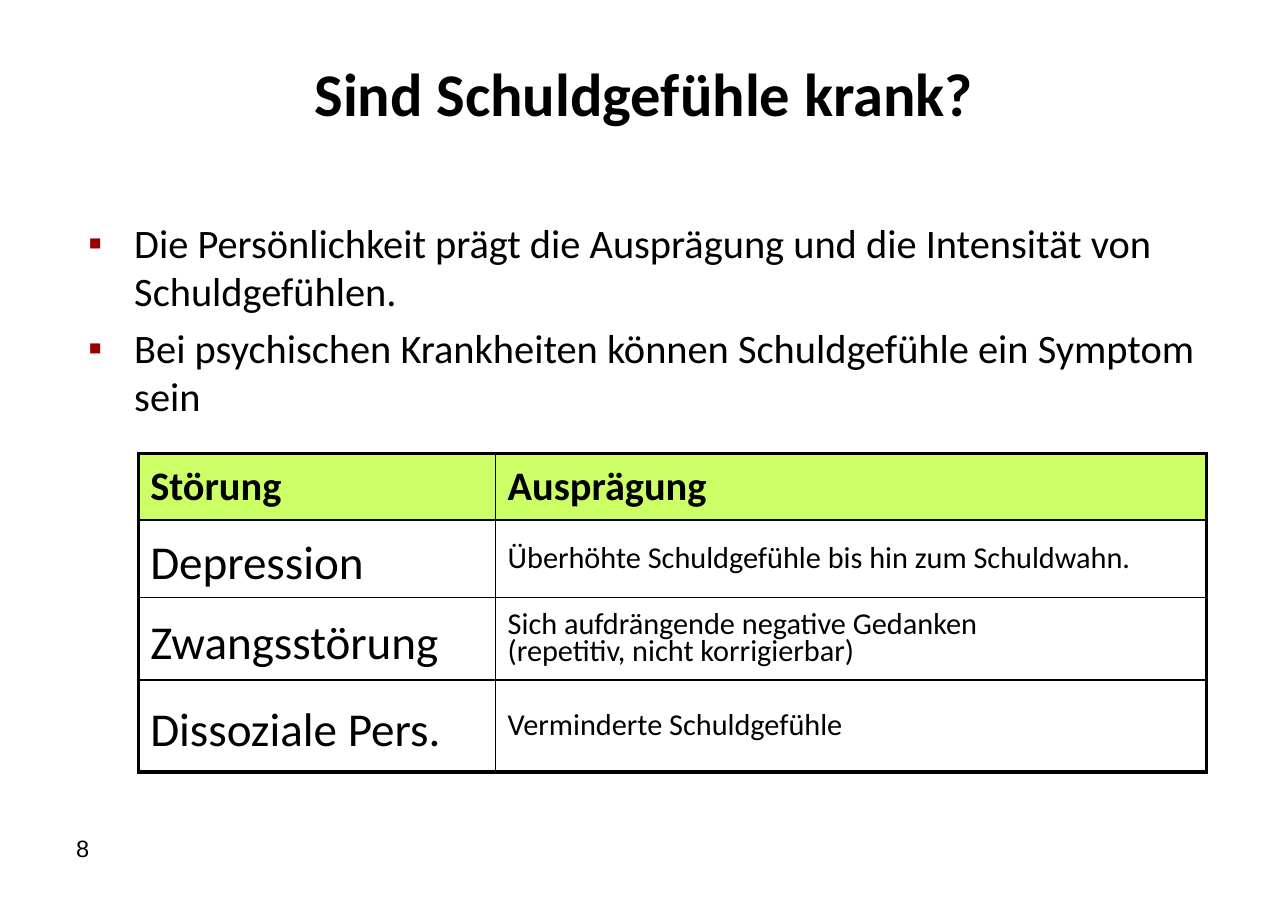
from lxml.etree import SubElement
from pptx import Presentation
from pptx.dml.color import RGBColor
from pptx.enum.text import MSO_ANCHOR, PP_ALIGN
from pptx.oxml.ns import qn
from pptx.util import Inches, Pt

BLACK = RGBColor(0x00, 0x00, 0x00)
RED = RGBColor(0x99, 0x00, 0x00)
LIME = RGBColor(0xCC, 0xFF, 0x66)
WHITE = RGBColor(0xFF, 0xFF, 0xFF)

TITLE = "Sind Schuldgefühle krank?"
POINTS = [
    "Die Persönlichkeit prägt die Ausprägung und die Intensität von Schuldgefühlen.",
    "Bei psychischen Krankheiten können Schuldgefühle ein Symptom sein",
]
ROWS = [
    ("Störung", "Ausprägung"),
    ("Depression", "Überhöhte Schuldgefühle bis hin zum Schuldwahn."),
    ("Zwangsstörung",
     "Sich aufdrängende negative Gedanken\n(repetitiv, nicht korrigierbar)"),
    ("Dissoziale Pers.", "Verminderte Schuldgefühle"),
]
WIDTHS = [2.95, 5.87]
HEIGHTS = [0.55, 0.64, 0.68, 0.76]
NUMBER = "8"


def add_text(par, text, size, font="Calibri", bold=False):
    """Add one run per line of text, with line breaks between."""
    for i, line in enumerate(text.split("\n")):
        if i:
            par.add_line_break()
        run = par.add_run()
        run.text = line
        run.font.size = Pt(size)
        run.font.name = font
        run.font.bold = bold
        run.font.color.rgb = BLACK


def add_box(slide, left, top, width, height):
    box = slide.shapes.add_textbox(
        Inches(left), Inches(top), Inches(width), Inches(height))
    box.text_frame.word_wrap = True
    return box.text_frame


def add_bullet(par):
    props = par._p.get_or_add_pPr()
    props.set("marL", str(Inches(0.38)))
    props.set("indent", str(-Inches(0.38)))
    color = SubElement(props, qn("a:buClr"))
    SubElement(color, qn("a:srgbClr"), val=str(RED))
    SubElement(props, qn("a:buFont"), typeface="Arial")
    SubElement(props, qn("a:buChar"), char="▪")


def add_edges(cell, outer):
    """Draw the four cell borders, thicker where outer is true."""
    props = cell._tc.get_or_add_tcPr()
    for side, thick in outer.items():
        width = Pt(2.25 if thick else 1)
        line = SubElement(props, qn("a:ln" + side), w=str(width))
        fill = SubElement(line, qn("a:solidFill"))
        SubElement(fill, qn("a:srgbClr"), val=str(BLACK))


def fill_cell(cell, text, row, col):
    head = row == 0
    add_edges(cell, {
        "L": col == 0, "R": col == len(WIDTHS) - 1,
        "T": head, "B": row == len(ROWS) - 1})
    cell.fill.solid()
    cell.fill.fore_color.rgb = LIME if head else WHITE
    cell.vertical_anchor = MSO_ANCHOR.MIDDLE
    cell.margin_top = Inches(0.05 if head else 0.12)
    par = cell.text_frame.paragraphs[0]
    if head:
        add_text(par, text, 24, bold=True)
    elif col == 0:
        add_text(par, text, 28)
    else:
        par.line_spacing = Pt(16)
        add_text(par, text, 18)


def add_grid(slide):
    table = slide.shapes.add_table(
        len(ROWS), len(WIDTHS), Inches(1.14), Inches(3.74),
        Inches(sum(WIDTHS)), Inches(sum(HEIGHTS))).table
    table.horz_banding = False
    for col, width in enumerate(WIDTHS):
        table.columns[col].width = Inches(width)
    for row, texts in enumerate(ROWS):
        table.rows[row].height = Inches(HEIGHTS[row])
        for col, text in enumerate(texts):
            fill_cell(table.cell(row, col), text, row, col)


def main():
    prs = Presentation()
    prs.slide_width = Inches(10.63)
    prs.slide_height = Inches(7.5)
    slide = prs.slides.add_slide(prs.slide_layouts[6])

    number = add_box(slide, 0.53, 6.83, 2.48, 0.52)
    add_text(number.paragraphs[0], NUMBER, 14, font="Arial")

    title = add_box(slide, 0.53, 0.3, 9.57, 0.93)
    title.vertical_anchor = MSO_ANCHOR.MIDDLE
    title.paragraphs[0].alignment = PP_ALIGN.CENTER
    add_text(title.paragraphs[0], TITLE, 36, bold=True)

    body = add_box(slide, 0.63, 1.75, 9.57, 1.53)
    for i, point in enumerate(POINTS):
        par = body.add_paragraph() if i else body.paragraphs[0]
        add_bullet(par)
        if i:
            par.space_before = Pt(4.8)
        add_text(par, point, 24)

    add_grid(slide)
    prs.save("out.pptx")


if __name__ == "__main__":
    main()
